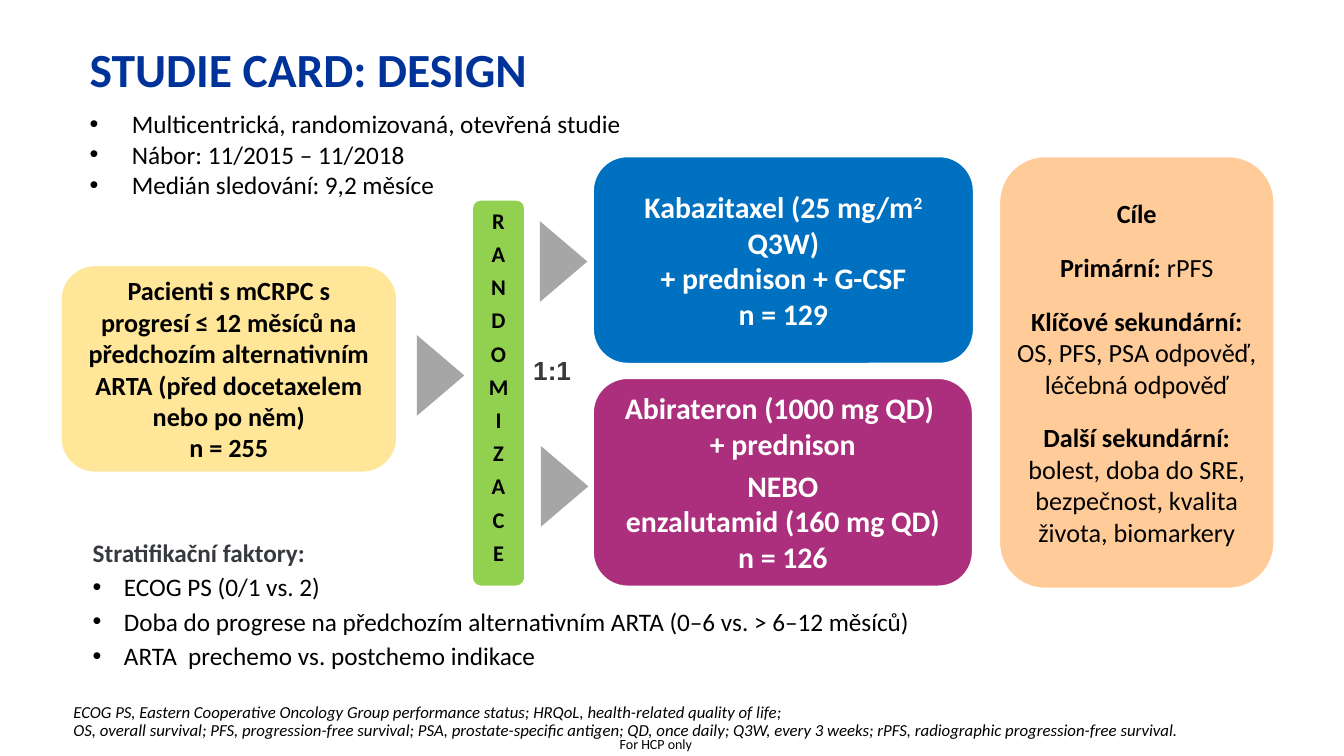
from lxml import etree
from pptx import Presentation
from pptx.dml.color import RGBColor
from pptx.enum.shapes import MSO_SHAPE
from pptx.enum.text import MSO_ANCHOR, PP_ALIGN
from pptx.oxml.ns import qn
from pptx.util import Inches, Pt

ROUNDED = MSO_SHAPE.ROUNDED_RECTANGLE
TRIANGLE = MSO_SHAPE.ISOSCELES_TRIANGLE
TOP, MIDDLE, BOTTOM = MSO_ANCHOR.TOP, MSO_ANCHOR.MIDDLE, MSO_ANCHOR.BOTTOM
LEFT, CENTER = PP_ALIGN.LEFT, PP_ALIGN.CENTER

COLORS = {
    "title": "003399",
    "black": "000000",
    "white": "FFFFFF",
    "slate": "363A3E",
    "arrow": "A6A6A6",
    "patients": "FFE699",
    "randomization": "92D050",
    "cabazitaxel": "0070C0",
    "comparator": "AB2F7C",
    "goals": "FFCC99",
}


class StudyCard:
    def __init__(self, presentation):
        self.slide = presentation.slides.add_slide(presentation.slide_layouts[6])
        self.font = "Calibri"

    def color(self, name):
        return RGBColor.from_string(COLORS[name])

    def fill_text(self, shape, texts, size, color="black", bold=False, italic=False,
                  align=LEFT, anchor=TOP, before=0, spacing=None, font=None,
                  inset=(0.1, 0.05)):
        frame = shape.text_frame
        frame.word_wrap = True
        frame.vertical_anchor = anchor
        frame.margin_left = frame.margin_right = Inches(inset[0])
        frame.margin_top = frame.margin_bottom = Inches(inset[1])
        for index, text in enumerate(texts):
            paragraph = frame.add_paragraph() if index else frame.paragraphs[0]
            first, *others = [text] if isinstance(text, str) else text
            paragraph.text = first
            for other in others:
                paragraph.add_run().text = other
            paragraph.alignment = align
            paragraph.space_before = Pt(before)
            if spacing:
                paragraph.line_spacing = spacing
            for run in paragraph.runs:
                run.font.name = font or self.font
                run.font.size = Pt(size)
                run.font.bold = bold
                run.font.italic = italic
                run.font.color.rgb = self.color(color)
        return frame.paragraphs

    def text(self, left, top, width, height, texts, size, **style):
        shape = self.slide.shapes.add_textbox(
            Inches(left), Inches(top), Inches(width), Inches(height))
        return self.fill_text(shape, texts, size, **style)

    def box(self, left, top, width, height, fill, texts, size, **style):
        shape = self.slide.shapes.add_shape(
            ROUNDED, Inches(left), Inches(top), Inches(width), Inches(height))
        shape.shadow.inherit = False
        shape.fill.solid()
        shape.fill.fore_color.rgb = self.color(fill)
        shape.line.color.rgb = self.color("white")
        shape.line.width = Pt(1.5)
        return self.fill_text(shape, texts, size, bold=True, align=CENTER, **style)

    def arrow(self, left, top):
        shape = self.slide.shapes.add_shape(
            TRIANGLE, Inches(left), Inches(top), Inches(0.8), Inches(0.47))
        shape.rotation = 90
        shape.shadow.inherit = False
        shape.fill.solid()
        shape.fill.fore_color.rgb = self.color("arrow")
        shape.line.fill.background()

    def bullets(self, paragraphs, indent):
        for paragraph in paragraphs:
            properties = paragraph._p.get_or_add_pPr()
            properties.set("marL", str(Inches(indent)))
            properties.set("indent", str(-Inches(indent)))
            etree.SubElement(properties, qn("a:buFont")).set("typeface", "Arial")
            etree.SubElement(properties, qn("a:buChar")).set("char", "•")


def main():
    presentation = Presentation()
    presentation.slide_width = Inches(13.33)
    presentation.slide_height = Inches(7.5)
    card = StudyCard(presentation)

    card.text(0.79, 0.41, 11.71, 0.61, ["STUDIE CARD: DESIGN"], 34,
              color="title", bold=True, anchor=BOTTOM, spacing=0.9)
    overview = card.text(0.79, 1.03, 12.34, 1.03, [
        "Multicentrická, randomizovaná, otevřená studie",
        "Nábor: 11/2015 – 11/2018",
        "Medián sledování: 9,2 měsíce",
    ], 18)
    card.bullets(overview, 0.42)
    card.text(0.63, 6.85, 11.87, 0.54, [
        "ECOG PS, Eastern Cooperative Oncology Group performance status; "
        "HRQoL, health-related quality of life; \n"
        "OS, overall survival; PFS, progression-free survival; PSA, prostate-specific antigen; "
        "QD, once daily; Q3W, every 3 weeks; rPFS, radiographic progression-free survival.",
    ], 12, italic=True, anchor=BOTTOM, before=2.7, spacing=0.9)

    goals = card.box(9.91, 1.55, 2.73, 4.29, "goals", [
        "Cíle",
        ("Primární: ", "rPFS"),
        ("Klíčové sekundární: ", "OS, PFS, PSA odpověď, léčebná odpověď"),
        ("Další sekundární: ", "bolest, doba do SRE, bezpečnost, kvalita života, biomarkery"),
    ], 18.7, anchor=MIDDLE, before=16, inset=(0, 0))
    for goal in goals[1:]:
        goal.runs[1].font.bold = False

    card.box(0.6, 2.63, 3.34, 2.06, "patients", [
        "Pacienti s mCRPC s progresí ≤ 12 měsíců na předchozím "
        "alternativním ARTA (před docetaxelem nebo po něm)",
        "n = 255",
    ], 18.7, anchor=MIDDLE)
    card.box(4.68, 1.98, 0.53, 3.84, "randomization", "RANDOMIZACE", 16, before=4.5)

    cabazitaxel = card.box(5.88, 1.55, 3.78, 2.06, "cabazitaxel", [
        ("Kabazitaxel (25 mg/m", "2", " Q3W)"),
        "+ prednison + G-CSF",
        "n = 129",
    ], 21.3, color="white", anchor=MIDDLE)
    cabazitaxel[0].space_before = Pt(4)
    cabazitaxel[0].runs[1]._r.get_or_add_rPr().set("baseline", "30000")

    comparator = card.box(5.88, 3.75, 3.77, 2.07, "comparator", [
        "Abirateron (1000 mg QD) \n+ prednison",
        "NEBO",
        "enzalutamid (160 mg QD)",
        "n = 126",
    ], 21.3, color="white", anchor=MIDDLE)
    for paragraph in comparator[:2]:
        paragraph.space_before = Pt(4)

    for left, top in [(3.97, 3.49), (5.19, 2.36), (5.2, 4.59)]:
        card.arrow(left, top)
    card.text(5.19, 3.47, 0.67, 0.42, ["1:1"], 18.7,
              color="slate", bold=True, font="Arial")

    factors = card.text(0.79, 5.26, 11.87, 1.5, [
        "Stratifikační faktory:",
        "ECOG PS (0/1 vs. 2)",
        "Doba do progrese na předchozím alternativním ARTA (0–6 vs. > 6–12 měsíců)",
        "ARTA  prechemo vs. postchemo indikace",
    ], 18, before=3, inset=(0.13, 0.07))
    factors[0].space_before = Pt(0)
    factors[0].runs[0].font.bold = True
    factors[0].runs[0].font.color.rgb = card.color("slate")
    card.bullets(factors[1:], 0.31)

    card.text(5.72, 7.25, 1.57, 0.25, ["For HCP only"], 10, align=CENTER, anchor=MIDDLE)
    presentation.save("out.pptx")


if __name__ == "__main__":
    main()
